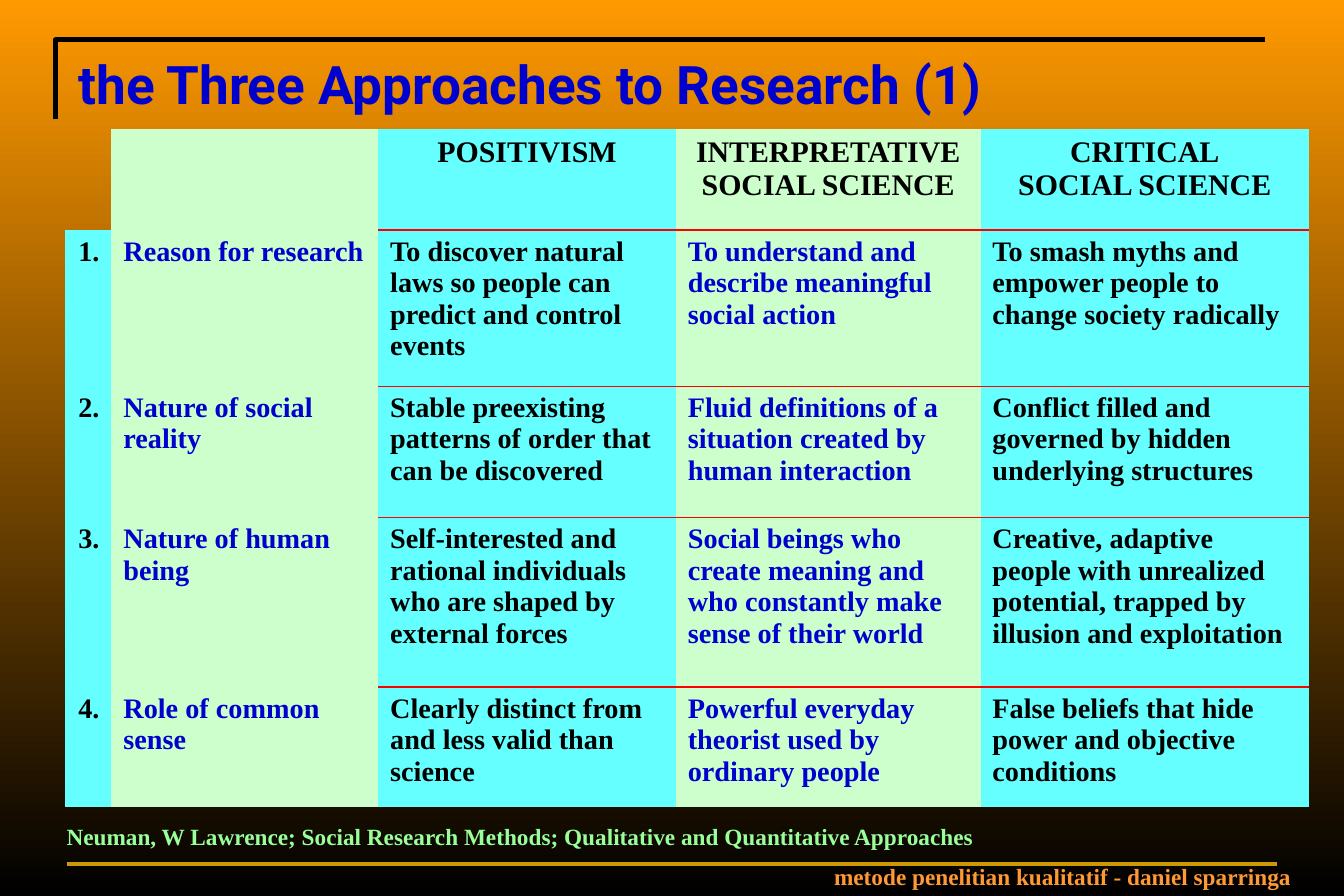
from lxml import etree
from pptx import Presentation
from pptx.dml.color import RGBColor
from pptx.enum.shapes import MSO_CONNECTOR
from pptx.enum.text import MSO_ANCHOR, PP_ALIGN
from pptx.oxml.ns import qn
from pptx.util import Pt

PX = 7620  # EMU per px, 120 px to the inch
BLANK_LAYOUT = 6
STRAIGHT = MSO_CONNECTOR.STRAIGHT
TOP, BOTTOM = MSO_ANCHOR.TOP, MSO_ANCHOR.BOTTOM
LEFT, CENTER, RIGHT = PP_ALIGN.LEFT, PP_ALIGN.CENTER, PP_ALIGN.RIGHT
SERIF, SANS = "Times New Roman", "Roboto"
NO_STYLE = "{2D5ABB26-0587-4C30-8999-92F81FD0307C}"
BLACK, BLUE, RED = "000000", "0000CC", "FF0000"
CYAN, PALE_GREEN = "66FFFF", "CCFFCC"

COLUMN_WIDTHS = [47, 268, 299, 306, 330]
ROW_HEIGHTS = [101, 157, 132, 170, 121]
APPROACHES = [
    ["", "", "POSITIVISM", "INTERPRETATIVE\nSOCIAL SCIENCE",
     "CRITICAL\nSOCIAL SCIENCE"],
    ["1.", "Reason for research",
     "To discover natural laws so people can predict and control events",
     "To understand and describe meaningful social action",
     "To smash myths and empower people to change society radically"],
    ["2.", "Nature of social reality",
     "Stable preexisting patterns of order that can be discovered",
     "Fluid definitions of a situation created by human interaction",
     "Conflict filled and governed by hidden underlying structures"],
    ["3.", "Nature of human being",
     "Self-interested and rational individuals who are shaped by external forces",
     "Social beings who create meaning and who constantly make sense of their world",
     "Creative, adaptive people with unrealized potential, trapped by illusion "
     "and exploitation"],
    ["4.", "Role of common sense",
     "Clearly distinct from and less valid than science",
     "Powerful everyday theorist used by ordinary people",
     "False beliefs that hide power and objective conditions"],
]


def px(length):
    return length * PX


def rgb(color):
    return RGBColor.from_string(color)


def set_background(slide, top_color, bottom_color):
    fill = slide.background.fill
    fill.gradient()
    fill.gradient_angle = 270
    for stop, color in zip(fill.gradient_stops, (top_color, bottom_color)):
        stop.color.rgb = rgb(color)


def write_text(text_frame, text, size, color, font_name=SERIF, align=LEFT):
    text_frame.text = text
    for paragraph in text_frame.paragraphs:
        paragraph.alignment = align
        font = paragraph.font
        font.name, font.size, font.bold = font_name, Pt(size), True
        font.color.rgb = rgb(color)


def add_text(slide, box, text, size, color, font_name=SERIF, anchor=TOP):
    text_frame = slide.shapes.add_textbox(*map(px, box)).text_frame
    text_frame.word_wrap = True
    text_frame.vertical_anchor = anchor
    write_text(text_frame, text, size, color, font_name)


def add_corner_frame(slide, points, color, width):
    builder = slide.shapes.build_freeform(*points[0], scale=PX)
    builder.add_line_segments(points[1:], close=False)
    shape = builder.convert_to_shape()
    shape.shadow.inherit = False
    shape.fill.background()
    shape.line.color.rgb = rgb(color)
    shape.line.width = Pt(width)


def add_rule(slide, start, end, color, width):
    connector = slide.shapes.add_connector(STRAIGHT, *map(px, start + end))
    connector.line.color.rgb = rgb(color)
    connector.line.width = Pt(width)
    etree.SubElement(connector._element.spPr, qn("a:effectLst"))


def add_borders(cell, sides, color):
    properties = cell._tc.get_or_add_tcPr()
    for index, side in enumerate(sides):
        line = etree.Element(qn(f"a:ln{side}"), w=str(Pt(1)))
        fill = etree.SubElement(line, qn("a:solidFill"))
        etree.SubElement(fill, qn("a:srgbClr"), val=color)
        properties.insert(index, line)


def style_cell(cell, row, column, text):
    is_green = column % 2 == 1
    is_header = row == 0
    if is_header and column == 0:
        cell.fill.background()
    else:
        cell.fill.solid()
        cell.fill.fore_color.rgb = rgb(PALE_GREEN if is_green else CYAN)
    if text:
        align = CENTER if is_header else RIGHT if column == 0 else LEFT
        color = BLUE if is_green and not is_header else BLACK
        write_text(cell.text_frame, text, 18 if is_header else 17, color, align=align)
    # Red rules only between the rows of the three approaches
    if column >= 2:
        sides = ("T" if row > 0 else "") + ("B" if row < len(APPROACHES) - 1 else "")
        add_borders(cell, sides, RED)


def add_approaches_table(slide, left, top):
    frame = slide.shapes.add_table(
        len(ROW_HEIGHTS), len(COLUMN_WIDTHS), px(left), px(top),
        px(sum(COLUMN_WIDTHS)), px(sum(ROW_HEIGHTS)))
    table = frame.table
    table.first_row = table.horz_banding = False
    table._tbl.tblPr.find(qn("a:tableStyleId")).text = NO_STYLE
    for column, width in zip(table.columns, COLUMN_WIDTHS):
        column.width = px(width)
    for row, height in zip(table.rows, ROW_HEIGHTS):
        row.height = px(height)
    for row, texts in enumerate(APPROACHES):
        for column, text in enumerate(texts):
            style_cell(table.cell(row, column), row, column, text)


def main():
    presentation = Presentation()
    presentation.slide_width, presentation.slide_height = px(1350), px(900)
    slide = presentation.slides.add_slide(presentation.slide_layouts[BLANK_LAYOUT])

    # Backdrop and rules
    set_background(slide, "FF9900", BLACK)
    add_corner_frame(slide, [(56, 120), (56, 40), (1271, 40)], BLACK, 3)
    add_rule(slide, (67, 868), (1283, 868), "CC9900", 2.25)

    # Footer, title and citation
    add_text(slide, (826, 840, 494, 60),
             "metode penelitian kualitatif - daniel sparringa", 14, "FF9933",
             anchor=BOTTOM)
    add_text(slide, (67, 46, 1214, 84), "the Three Approaches to Research (1)",
             32, BLUE, SANS)
    add_text(slide, (55, 820, 1000, 40),
             "Neuman, W Lawrence; Social Research Methods; "
             "Qualitative and Quantitative Approaches", 14, "99FF99")

    # Comparison of the approaches
    add_approaches_table(slide, 65, 130)

    presentation.save("out.pptx")


if __name__ == "__main__":
    main()
